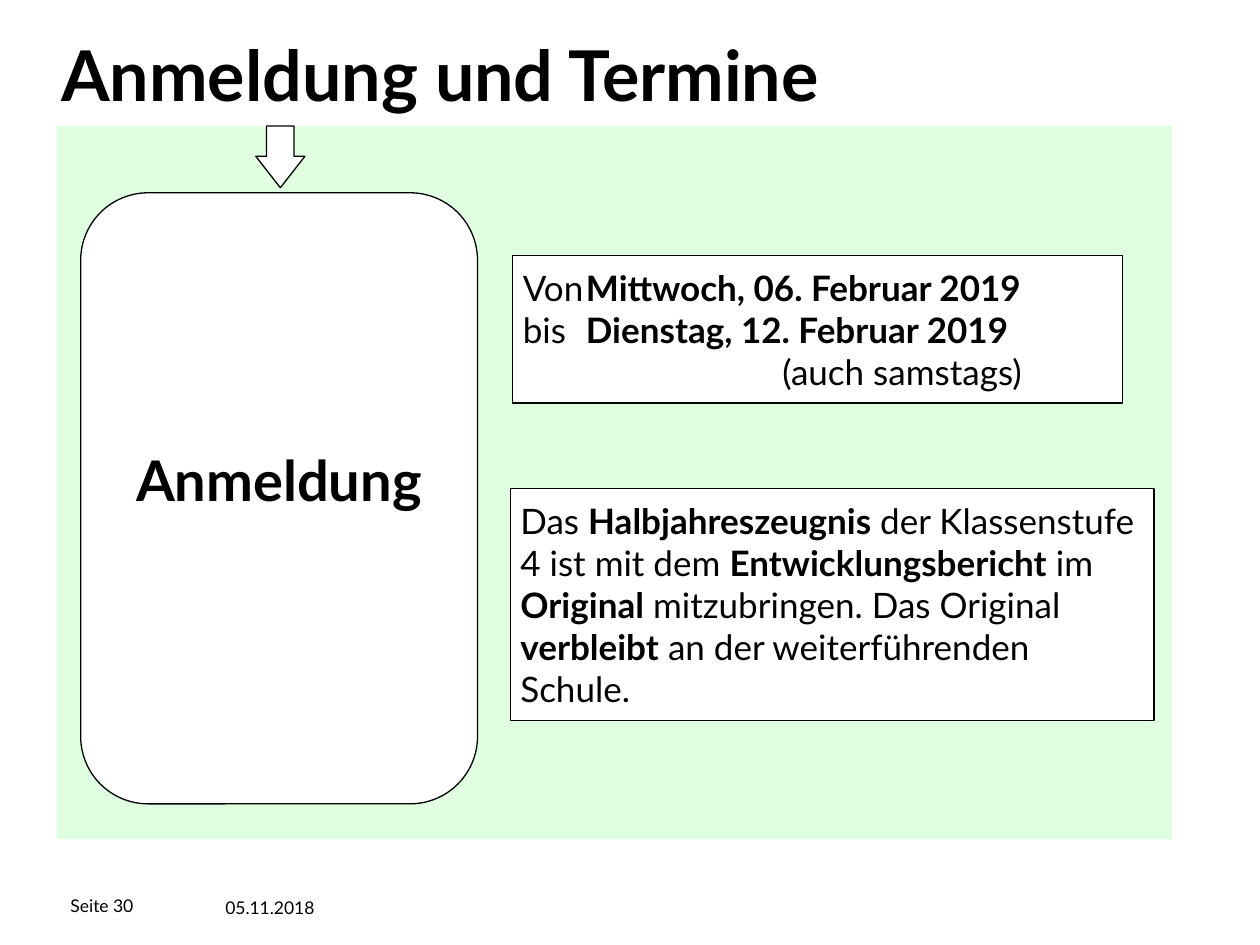
from dataclasses import dataclass

from lxml import etree
from pptx import Presentation
from pptx.dml.color import RGBColor
from pptx.enum.shapes import MSO_SHAPE as Shape
from pptx.enum.text import MSO_ANCHOR as Anchor, PP_ALIGN as Align
from pptx.oxml.ns import qn
from pptx.util import Inches, Pt


@dataclass(frozen=True)
class Theme:
    font: str = "Lato"
    text: RGBColor = RGBColor(0, 0, 0)
    white: RGBColor = RGBColor(255, 255, 255)
    panel: RGBColor = RGBColor(0xCC, 0xFF, 0xCC)
    panel_opacity: int = 60
    line_width: float = 0.75
    title_size: int = 40
    step_size: int = 32
    body_size: int = 20
    footer_size: int = 10


THEME = Theme()


def add_box(slide, kind, left, top, width, height, adjustments=()):
    """Add a white shape with a thin black outline."""
    shape = slide.shapes.add_shape(
        kind, Inches(left), Inches(top), Inches(width), Inches(height))
    shape.shadow.inherit = False
    shape.fill.solid()
    shape.fill.fore_color.rgb = THEME.white
    shape.line.color.rgb = THEME.text
    shape.line.width = Pt(THEME.line_width)
    for index, value in enumerate(adjustments):
        shape.adjustments[index] = value
    return shape


def add_panel(slide, left, top, width, height):
    """Add the translucent background area."""
    panel = add_box(slide, Shape.RECTANGLE, left, top, width, height)
    panel.line.fill.background()
    panel.fill.fore_color.rgb = THEME.panel
    color = panel.fill._xPr.find(qn("a:solidFill"))[0]
    etree.SubElement(color, qn("a:alpha"), val=str(THEME.panel_opacity * 1000))


def set_frame(frame, margins, anchor=Anchor.MIDDLE, wrap=True):
    """Margins are left, top, right and bottom in inches."""
    (frame.margin_left, frame.margin_top,
     frame.margin_right, frame.margin_bottom) = map(Inches, margins)
    frame.vertical_anchor = anchor
    frame.word_wrap = wrap


def style_paragraph(paragraph, size, bold=None, align=Align.LEFT):
    paragraph.alignment = align
    font = paragraph.font
    font.name, font.size, font.bold = THEME.font, Pt(size), bold
    font.color.rgb = THEME.text


def add_label(slide, text, left, top, width, height, size, margins,
              bold=False, anchor=Anchor.TOP):
    """Add a single line of plain text."""
    box = slide.shapes.add_textbox(
        Inches(left), Inches(top), Inches(width), Inches(height))
    set_frame(box.text_frame, margins, anchor, wrap=False)
    paragraph = box.text_frame.paragraphs[0]
    paragraph.text = text
    style_paragraph(paragraph, size, bold)


def add_step(slide, text, left, top, width, height):
    """Add the rounded box with its heading slightly above the middle."""
    step = add_box(slide, Shape.ROUNDED_RECTANGLE, left, top, width, height, [0.17])
    set_frame(step.text_frame, (0.04, 0.39, 0.04, 0.69))
    paragraph = step.text_frame.paragraphs[0]
    paragraph.text = text
    style_paragraph(paragraph, THEME.step_size, True, Align.CENTER)


def add_note(slide, lines, left, top, width, height):
    """Each line is a list of runs that alternate between regular and bold."""
    note = add_box(slide, Shape.RECTANGLE, left, top, width, height)
    frame = note.text_frame
    set_frame(frame, (0.08,) * 4)
    for index, runs in enumerate(lines):
        paragraph = frame.add_paragraph() if index else frame.paragraphs[0]
        for position, text in enumerate(runs):
            run = paragraph.add_run()
            run.text = text
            run.font.bold = position % 2 == 1
    return frame.paragraphs


def set_layout(paragraph, indent=0, tab=None):
    """Set the left indent and an optional tab stop in inches."""
    properties = paragraph._p.get_or_add_pPr()
    properties.set("marL", str(Inches(indent)))
    properties.set("indent", "0")
    if tab:
        tabs = etree.SubElement(properties, qn("a:tabLst"))
        etree.SubElement(tabs, qn("a:tab"), pos=str(Inches(tab)), algn="l")


def main():
    presentation = Presentation()
    presentation.slide_width, presentation.slide_height = Inches(10), Inches(7.5)
    slide = presentation.slides.add_slide(presentation.slide_layouts[6])

    # Footer
    add_label(slide, "Seite 30", 0.56, 7.07, 1.26, 0.24, THEME.footer_size,
              (0,) * 4, anchor=Anchor.MIDDLE)
    add_label(slide, "05.11.2018", 1.69, 7.07, 1.26, 0.24, THEME.footer_size,
              (0.1, 0.05, 0.1, 0.05))

    # Background and title
    add_panel(slide, 0.45, 1, 8.85, 5.66)
    add_label(slide, "Anmeldung und Termine", 0.39, 0.2, 6.69, 0.77,
              THEME.title_size, (0.1, 0.05, 0.1, 0.05), bold=True)

    # Step with the arrow leading into it
    add_step(slide, "Anmeldung", 0.64, 1.53, 3.15, 4.85)
    add_box(slide, Shape.DOWN_ARROW, 2.03, 1, 0.39, 0.49, [0.56, 0.64])

    # Required documents
    documents = add_note(slide, [[
        "Das ", "Halbjahreszeugnis", " der Klassenstufe 4 ist mit dem ",
        "Entwicklungsbericht", " im ", "Original",
        " mitzubringen. Das Original ", "verbleibt",
        " an der weiterführenden Schule."]], 4.05, 3.88, 5.11, 1.84)

    # Registration dates
    dates = add_note(slide, [
        ["Von\t", "Mittwoch, 06. Februar 2019"],
        ["bis\t", "Dienstag, 12. Februar 2019"],
        ["(auch samstags)"]], 4.07, 2.03, 4.84, 1.17)
    for paragraph in dates[:2]:
        set_layout(paragraph, tab=1)
    set_layout(dates[2], indent=2.06)

    for paragraph in (*documents, *dates):
        style_paragraph(paragraph, THEME.body_size)

    presentation.save("out.pptx")


if __name__ == "__main__":
    main()
